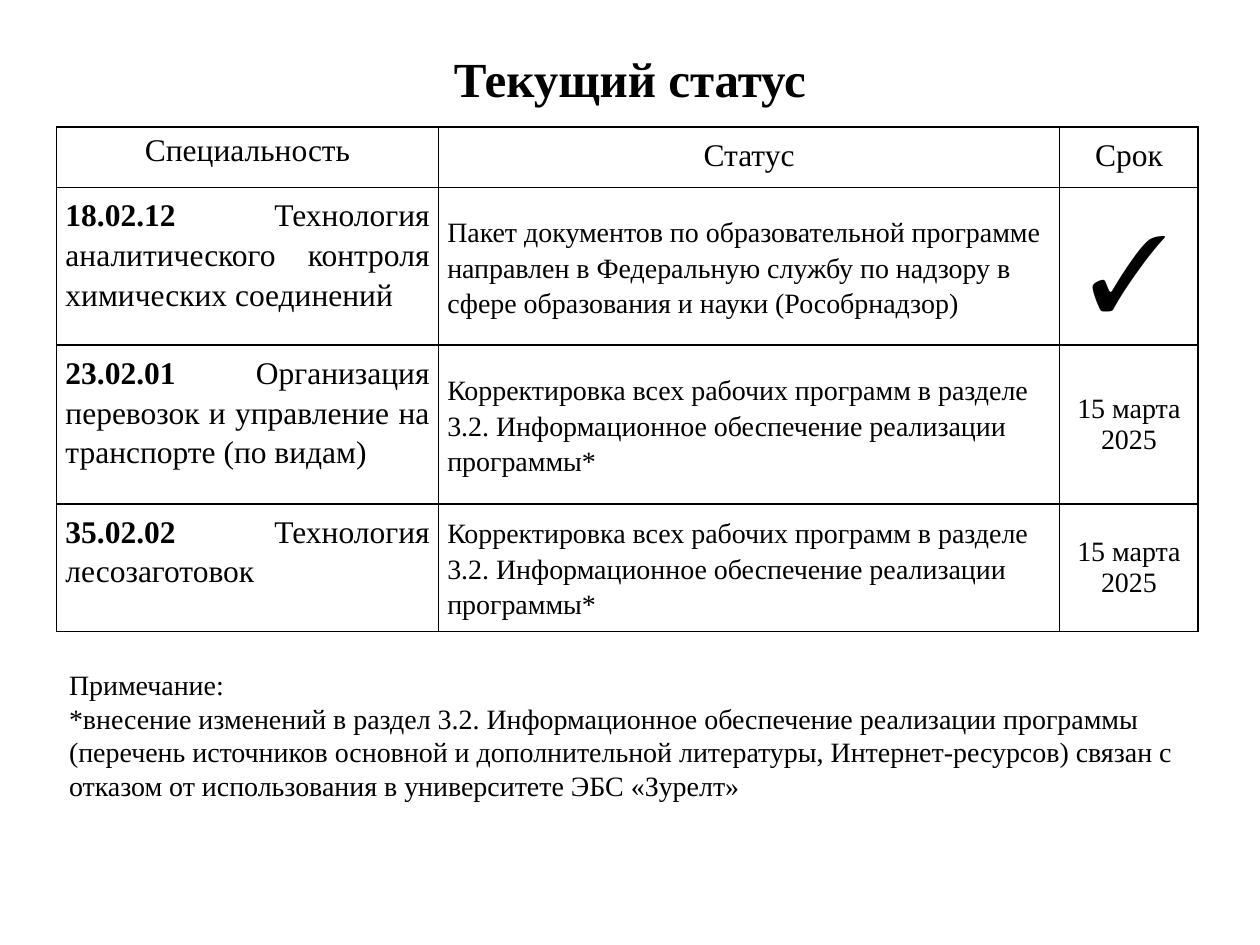
from lxml.etree import SubElement
from pptx import Presentation
from pptx.dml.color import RGBColor
from pptx.enum.text import MSO_ANCHOR as Anchor, PP_ALIGN as Align
from pptx.oxml.ns import qn
from pptx.util import Inches, Pt

FONT = "Times New Roman"
INK, PAPER = "000000", "FFFFFF"
COLUMN_WIDTHS = [3.03, 4.93, 1.1]
ROW_HEIGHTS = [0.48, 1.25, 1.26, 0.99]
MARGINS = {"margin_left": 0.07, "margin_right": 0.07, "margin_top": 0.05, "margin_bottom": 0.05}
LOOSE = 1.14

HEADINGS = ["Специальность", "Статус", "Срок"]
REVISION = ("Корректировка всех рабочих программ в разделе 3.2. "
            "Информационное обеспечение реализации программы*")
DEADLINE = "15 марта 2025"
PROGRAMMES = [
    ("18.02.12", "Технология аналитического контроля химических соединений",
     "Пакет документов по образовательной программе направлен в Федеральную службу "
     "по надзору в сфере образования и науки (Рособрнадзор)", "✓"),
    ("23.02.01", "Организация перевозок и управление на транспорте (по видам)", REVISION, DEADLINE),
    ("35.02.02", "Технология лесозаготовок", REVISION, DEADLINE),
]
NOTE = [
    "Примечание:",
    "*внесение изменений в раздел 3.2. Информационное обеспечение реализации программы "
    "(перечень источников основной и дополнительной литературы, Интернет-ресурсов) связан "
    "с отказом от использования в университете ЭБС «Зурелт»",
]


def color(hex_code):
    return RGBColor.from_string(hex_code)


def apply(target, values):
    for name, value in values.items():
        setattr(target, name, value)


def write(paragraph, pieces, size, align=Align.LEFT, spacing=None):
    """Fill a paragraph with (text, bold) pieces."""
    apply(paragraph, {"alignment": align, "line_spacing": spacing})
    for text, bold in pieces:
        run = paragraph.add_run()
        run.text = text
        apply(run.font, {"name": FONT, "size": Pt(size), "bold": bold})
        run.font.color.rgb = color(INK)


def add_text_area(slide, left, top, width, height, anchor=Anchor.TOP):
    area = slide.shapes.add_textbox(*map(Inches, (left, top, width, height))).text_frame
    apply(area, {"word_wrap": True, "vertical_anchor": anchor})
    return area


def style_cell(cell, anchor):
    """Give a cell its margins, thin borders and fill."""
    apply(cell, {name: Inches(value) for name, value in MARGINS.items()})
    cell.vertical_anchor = anchor
    properties = cell._tc.get_or_add_tcPr()
    for side in ("a:lnL", "a:lnR", "a:lnT", "a:lnB"):
        border = SubElement(properties, qn(side), w=str(Pt(1)))
        SubElement(SubElement(border, qn("a:solidFill")), qn("a:srgbClr"), val=INK)
    cell.fill.solid()
    cell.fill.fore_color.rgb = color(PAPER)


def fill_cell(cell, pieces, size, align, spacing, anchor=Anchor.TOP):
    style_cell(cell, anchor)
    write(cell.text_frame.paragraphs[0], pieces, size, align, spacing)


def add_status_table(slide, left, top):
    frame = slide.shapes.add_table(
        len(ROW_HEIGHTS), len(COLUMN_WIDTHS), Inches(left), Inches(top),
        Inches(sum(COLUMN_WIDTHS)), Inches(sum(ROW_HEIGHTS)))
    table = frame.table
    apply(table, {"first_row": False, "horz_banding": False})
    for column, width in zip(table.columns, COLUMN_WIDTHS):
        column.width = Inches(width)
    for row, height in zip(table.rows, ROW_HEIGHTS):
        row.height = Inches(height)

    for index, heading in enumerate(HEADINGS):
        fill_cell(table.cell(0, index), [(heading, False)], 18, Align.CENTER,
                  LOOSE if index else None)
    for index, (code, name, status, due) in enumerate(PROGRAMMES, start=1):
        done = due == "✓"
        fill_cell(table.cell(index, 0), [(code, True), (" " + name, False)], 18,
                  Align.JUSTIFY, LOOSE)
        fill_cell(table.cell(index, 1), [(status, False)], 16, Align.LEFT, LOOSE, Anchor.MIDDLE)
        fill_cell(table.cell(index, 2), [(due, False)], 60 if done else 16, Align.CENTER,
                  LOOSE if done else None, Anchor.MIDDLE)


def main():
    deck = Presentation()
    apply(deck, {"slide_width": Inches(10), "slide_height": Inches(7.5)})
    slide = deck.slides.add_slide(deck.slide_layouts[6])

    title = add_text_area(slide, 0.5, 0.3, 9, 0.7, Anchor.MIDDLE)
    write(title.paragraphs[0], [("Текущий статус", True)], 28, Align.CENTER, 0.9)

    add_status_table(slide, 0.45, 1.01)

    note = add_text_area(slide, 0.45, 5.25, 9.07, 1.18)
    for index, text in enumerate(NOTE):
        paragraph = note.add_paragraph() if index else note.paragraphs[0]
        write(paragraph, [(text, False)], 16)

    deck.save("out.pptx")


if __name__ == "__main__":
    main()
